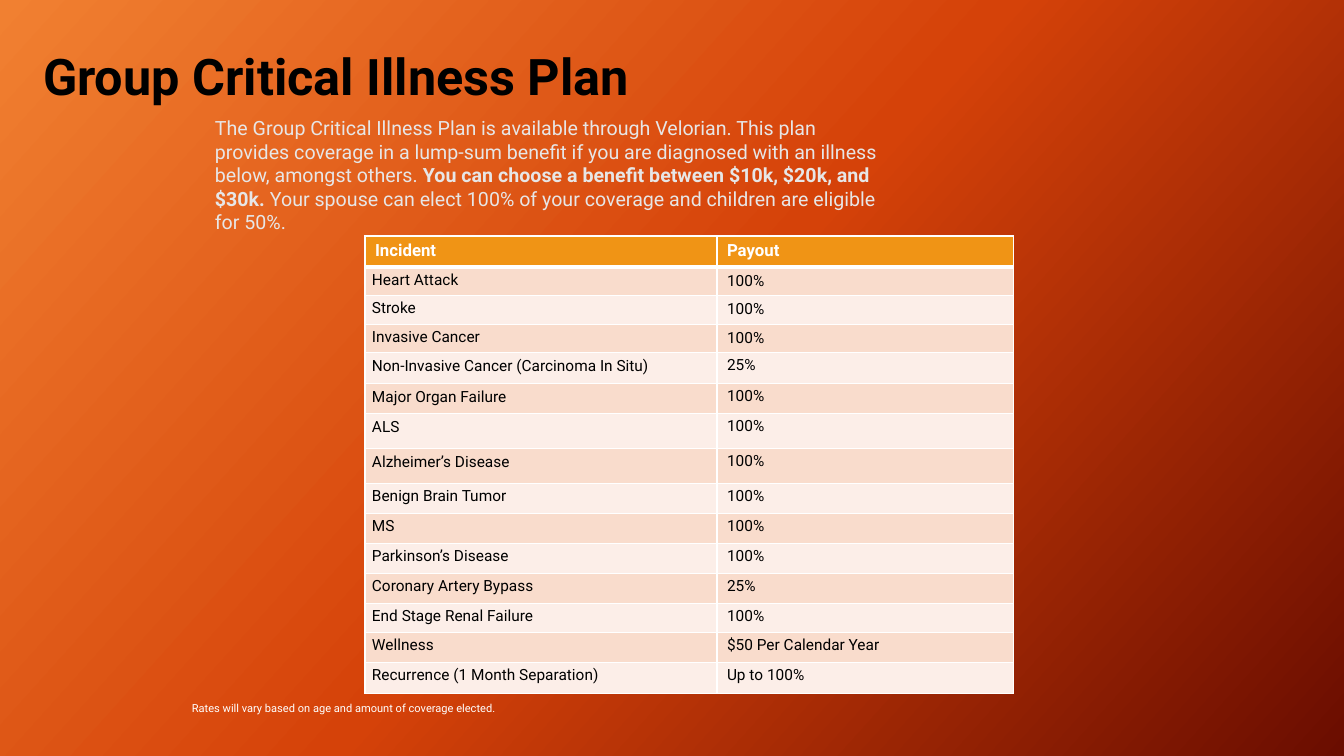
from copy import deepcopy

from lxml import etree
from pptx import Presentation
from pptx.dml.color import RGBColor
from pptx.enum.text import MSO_ANCHOR, PP_ALIGN
from pptx.oxml.ns import qn
from pptx.util import Emu, Pt

SCALE = 12192000 / 1344
FONT = "Roboto"
LEFT = PP_ALIGN.LEFT
BOTTOM = MSO_ANCHOR.BOTTOM
TITLE_ONLY = 5

ROW_HEIGHTS = [31, 28, 28, 28, 31, 30, 35, 35, 30, 30, 30, 30, 29, 30, 31]
COLUMN_WIDTHS = [352, 297]
PAYOUTS = [
    ("Incident", "Payout"),
    ("Heart Attack", "100%"),
    ("Stroke", "100%"),
    ("Invasive Cancer", "100%"),
    ("Non-Invasive Cancer (Carcinoma In Situ)", "25%"),
    ("Major Organ Failure", "100%"),
    ("ALS", "100%"),
    ("Alzheimer’s Disease", "100%"),
    ("Benign Brain Tumor", "100%"),
    ("MS", "100%"),
    ("Parkinson’s Disease", "100%"),
    ("Coronary Artery Bypass", "25%"),
    ("End Stage Renal Failure", "100%"),
    ("Wellness", "$50 Per Calendar Year"),
    ("Recurrence (1 Month Separation)", "Up to 100%"),
]
INTRO = [
    ("The Group Critical Illness Plan is available through Velorian. This plan "
     "provides coverage in a lump-sum benefit if you are diagnosed with an "
     "illness below, amongst others. ", False),
    ("You can choose a benefit between $10k, $20k, and $30k. ", True),
    ("Your spouse can elect 100% of your coverage and children are eligible "
     "for 50%.", False),
]


def px(value):
    return Emu(round(value * SCALE))


def color(value):
    return RGBColor.from_string(value)


def style(paragraph, size, text_color, bold=None):
    font = paragraph.font
    font.name = FONT
    font.size = Pt(size)
    font.color.rgb = color(text_color)
    font.bold = bold


def paint_background(slide, start, middle, end, angle):
    fill = slide.background.fill
    fill.gradient()
    fill.gradient_angle = 360 - angle
    stop_list = slide.element.find(".//" + qn("a:gsLst"))
    stop_list.insert(1, deepcopy(stop_list[0]))
    for stop, position, value in zip(
            fill.gradient_stops, (0, 0.5, 1), (start, middle, end)):
        stop.position = position
        stop.color.rgb = color(value)


def add_title(slide, text):
    title = slide.shapes.title
    title.left, title.top, title.width, title.height = map(px, (33, 20, 874, 91))
    frame = title.text_frame
    frame.text = text
    frame.vertical_anchor = BOTTOM
    paragraph = frame.paragraphs[0]
    paragraph.alignment = LEFT
    paragraph.line_spacing = 0.9
    style(paragraph, 36, "000000", True)


def add_text(slide, box, runs, size, text_color):
    frame = slide.shapes.add_textbox(*map(px, box)).text_frame
    frame.word_wrap = True
    paragraph = frame.paragraphs[0]
    style(paragraph, size, text_color)
    for text, bold in runs:
        run = paragraph.add_run()
        run.text = text
        run.font.bold = bold


def add_border(cell, side, points):
    properties = cell._tc.get_or_add_tcPr()
    line = etree.SubElement(properties, qn("a:ln" + side), w=str(Pt(points)))
    fill = etree.SubElement(line, qn("a:solidFill"))
    etree.SubElement(fill, qn("a:srgbClr"), val="FFFFFF")


def fill_cell(cell, text, row, column):
    header = row == 0
    for side in "LRTB" if header else "LRB":
        add_border(cell, side, 3 if header and side == "B" else 1)
    cell.fill.solid()
    banding = "F9DCCC" if row % 2 else "FCEEE8"
    cell.fill.fore_color.rgb = color("F09415" if header else banding)
    cell.text = text
    paragraph = cell.text_frame.paragraphs[0]
    if header:
        style(paragraph, 12, "FFFFFF", True)
    else:
        style(paragraph, 11, "000000", False)
        if column == 0:
            cell.margin_left = cell.margin_right = px(7)
            cell.margin_top = cell.margin_bottom = px(4)
        elif row > 3:
            paragraph.line_spacing = 0.9


def add_payout_table(slide, left, top):
    table = slide.shapes.add_table(
        len(PAYOUTS), len(COLUMN_WIDTHS), px(left), px(top),
        px(sum(COLUMN_WIDTHS)), px(sum(ROW_HEIGHTS))).table
    for column, width in zip(table.columns, COLUMN_WIDTHS):
        column.width = px(width)
    for row, height in zip(table.rows, ROW_HEIGHTS):
        row.height = px(height)
    for row, texts in enumerate(PAYOUTS):
        for column, text in enumerate(texts):
            fill_cell(table.cell(row, column), text, row, column)


def main():
    presentation = Presentation()
    presentation.slide_width = px(1344)
    presentation.slide_height = px(756)
    slide = presentation.slides.add_slide(presentation.slide_layouts[TITLE_ONLY])
    paint_background(slide, "F18031", "D54209", "6A0D00", 42)
    add_title(slide, "Group Critical Illness Plan")
    add_text(slide, (205, 111, 690, 50), INTRO, 14, "E7E6E6")
    add_payout_table(slide, 365, 236)
    note = "Rates will vary based on age and amount of coverage elected."
    add_text(slide, (182, 697, 841, 23), [(note, None)], 7.9, "FFFFFF")
    presentation.save("out.pptx")


if __name__ == "__main__":
    main()
